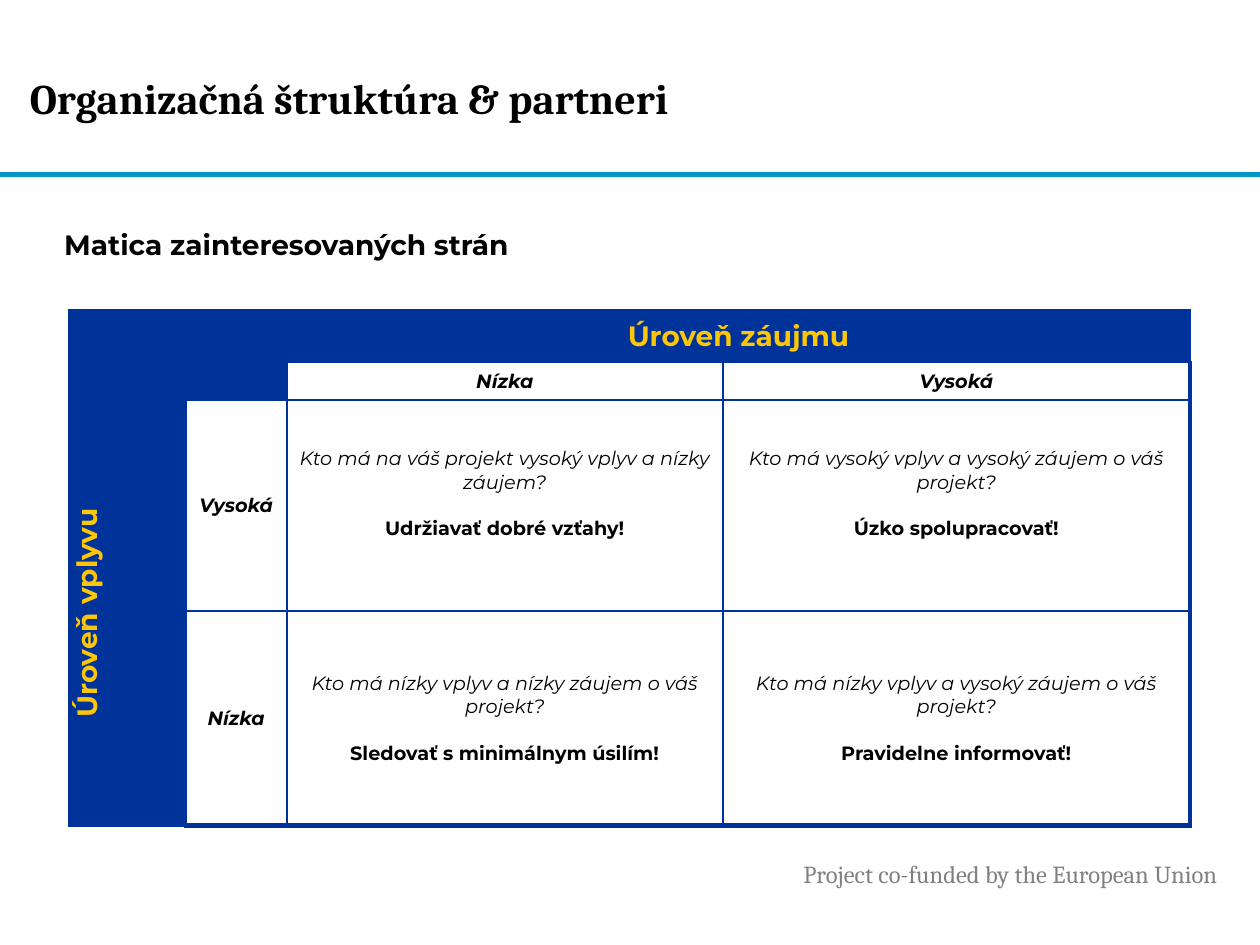
import pptx
import pptx.util
import pptx.dml.color
import pptx.enum.shapes
import pptx.enum.text
import pptx.oxml.ns
from lxml import etree

Pt = pptx.util.Pt
RGBColor = pptx.dml.color.RGBColor
ANCHOR = pptx.enum.text.MSO_ANCHOR
ALIGN = pptx.enum.text.PP_ALIGN

BLUE = RGBColor(0x00, 0x33, 0x99)
YELLOW = RGBColor(0xFD, 0xC6, 0x08)
TEAL = RGBColor(0x0C, 0x94, 0xB7)
CYAN = RGBColor(0x00, 0x96, 0xD3)
GREY = RGBColor(0x80, 0x80, 0x80)
BLACK = RGBColor(0, 0, 0)
WHITE = RGBColor(255, 255, 255)
SERIF, SANS = "Cambria", "Montserrat"

COLUMN_WIDTHS = [66, 58, 249, 267]
ROW_HEIGHTS = [29, 17.7, 120.5, 122.8]
LEVELS = {(1, 2): "Nízka", (1, 3): "Vysoká", (2, 1): "Vysoká", (3, 1): "Nízka"}
STRATEGIES = {
    (2, 2): ("Kto má na váš projekt vysoký vplyv a nízky záujem?", "Udržiavať dobré vzťahy!"),
    (2, 3): ("Kto má vysoký vplyv a vysoký záujem o váš projekt?", "Úzko spolupracovať!"),
    (3, 2): ("Kto má nízky vplyv a nízky záujem o váš projekt?", "Sledovať s minimálnym úsilím!"),
    (3, 3): ("Kto má nízky vplyv a vysoký záujem o váš projekt?", "Pravidelne informovať!"),
}


def style(paragraph, font_name, size, color, bold=False, italic=False):
    """Format every run of a paragraph."""
    for run in paragraph.runs:
        font = run.font
        font.name, font.size, font.bold, font.italic = font_name, Pt(size), bold, italic
        font.color.rgb = color


def set_margins(frame, left, top, right, bottom):
    """Set the insets of a text frame or cell in points."""
    frame.margin_left, frame.margin_top = Pt(left), Pt(top)
    frame.margin_right, frame.margin_bottom = Pt(right), Pt(bottom)


def add_title(slide, left, top, width, height):
    """Place the slide title and the rule beneath it."""
    rule = slide.shapes.add_shape(
        pptx.enum.shapes.MSO_SHAPE.RECTANGLE, 0, Pt(top + height), Pt(720), Pt(2.2))
    rule.shadow.inherit = False
    rule.fill.solid()
    rule.fill.fore_color.rgb = TEAL
    rule.line.color.rgb = CYAN
    rule.line.width = Pt(1)
    title = slide.shapes.title
    title.left, title.top, title.width, title.height = Pt(left), Pt(top), Pt(width), Pt(height)
    frame = title.text_frame
    set_margins(frame, 0, 0, 0, 0)
    frame.vertical_anchor = ANCHOR.MIDDLE
    frame.text = "Organizačná štruktúra & partneri"
    frame.paragraphs[0].alignment = ALIGN.LEFT
    style(frame.paragraphs[0], SERIF, 24, BLACK, bold=True)


def add_text(slide, left, top, width, height, wording, inset):
    """Place one line of text and return its paragraph."""
    frame = slide.shapes.add_textbox(Pt(left), Pt(top), Pt(width), Pt(height)).text_frame
    frame.word_wrap = True
    set_margins(frame, inset, 3.6, inset, 3.6)
    frame.text = wording
    return frame.paragraphs[0]


def set_borders(cell, widths):
    """Draw blue cell borders, in the order left, right, top, bottom."""
    properties = cell._tc.get_or_add_tcPr()
    for position, (tag, width) in enumerate(zip(("a:lnL", "a:lnR", "a:lnT", "a:lnB"), widths)):
        line = etree.Element(pptx.oxml.ns.qn(tag), w=str(Pt(width)))
        fill = etree.SubElement(line, pptx.oxml.ns.qn("a:solidFill"))
        etree.SubElement(fill, pptx.oxml.ns.qn("a:srgbClr"), val=str(BLUE))
        properties.insert(position, line)


def fill_cell(cell, *wordings):
    """Write centred paragraphs into a cell."""
    cell.text = "\n".join(wordings)
    for paragraph in cell.text_frame.paragraphs:
        paragraph.alignment = ALIGN.CENTER
    return cell.text_frame.paragraphs


def add_matrix(slide, left, top):
    """Place the stakeholder matrix."""
    matrix = slide.shapes.add_table(
        len(ROW_HEIGHTS), len(COLUMN_WIDTHS), Pt(left), Pt(top),
        Pt(sum(COLUMN_WIDTHS)), Pt(sum(ROW_HEIGHTS))).table
    for column, width in zip(matrix.columns, COLUMN_WIDTHS):
        column.width = Pt(width)
    for row, height in zip(matrix.rows, ROW_HEIGHTS):
        row.height = Pt(height)
    last_row, last_column = len(ROW_HEIGHTS) - 1, len(COLUMN_WIDTHS) - 1

    for r, row in enumerate(matrix.rows):
        for c, cell in enumerate(row.cells):
            is_header = r == 0 or c == 0 or (r, c) == (1, 1)
            cell.fill.solid()
            cell.fill.fore_color.rgb = BLUE if is_header else WHITE
            cell.vertical_anchor = ANCHOR.MIDDLE
            set_margins(cell, 4.3, 0, 4.3, 0)
            edges = (c == 0, c == last_column, r == 0, r == last_row)
            set_borders(cell, [3 if edge else 1.5 for edge in edges])

    for (r, c), level in LEVELS.items():
        style(fill_cell(matrix.cell(r, c), level)[0], SANS, 11, BLACK, bold=True, italic=True)
    for (r, c), wordings in STRATEGIES.items():
        cell = matrix.cell(r, c)
        question, action = fill_cell(cell, *wordings)
        style(question, SANS, 11, BLACK, italic=True)
        style(action, SANS, 11, BLACK, bold=True)
        action.space_before = Pt(13.4)
        if r == 2:
            cell.margin_bottom = Pt(13.4)

    for r, c, end_row, end_column in ((0, 0, 0, 1), (0, 2, 0, 3), (1, 0, 1, 1), (2, 0, 3, 0)):
        matrix.cell(r, c).merge(matrix.cell(end_row, end_column))
    for r, c, axis in ((0, 2, "Úroveň záujmu"), (2, 0, "Úroveň vplyvu")):
        style(fill_cell(matrix.cell(r, c), axis)[0], SANS, 16, YELLOW, bold=True)
    matrix.cell(2, 0)._tc.get_or_add_tcPr().set("vert", "vert270")


def main():
    """Build and save the slide."""
    deck = pptx.Presentation()
    deck.slide_width, deck.slide_height = Pt(720), Pt(540)
    slide = deck.slides.add_slide(deck.slide_layouts[5])
    add_title(slide, 17, 13, 543, 85.6)
    heading = add_text(slide, 36.7, 126.7, 611, 30, "Matica zainteresovaných strán", 0)
    style(heading, SANS, 16, BLACK, bold=True)
    add_matrix(slide, 40, 178)
    footer = add_text(slide, 452, 487.5, 264, 24.5, "Project co-funded by the European Union", 7.2)
    style(footer, SERIF, 14, GREY)
    deck.save("out.pptx")


if __name__ == "__main__":
    main()
